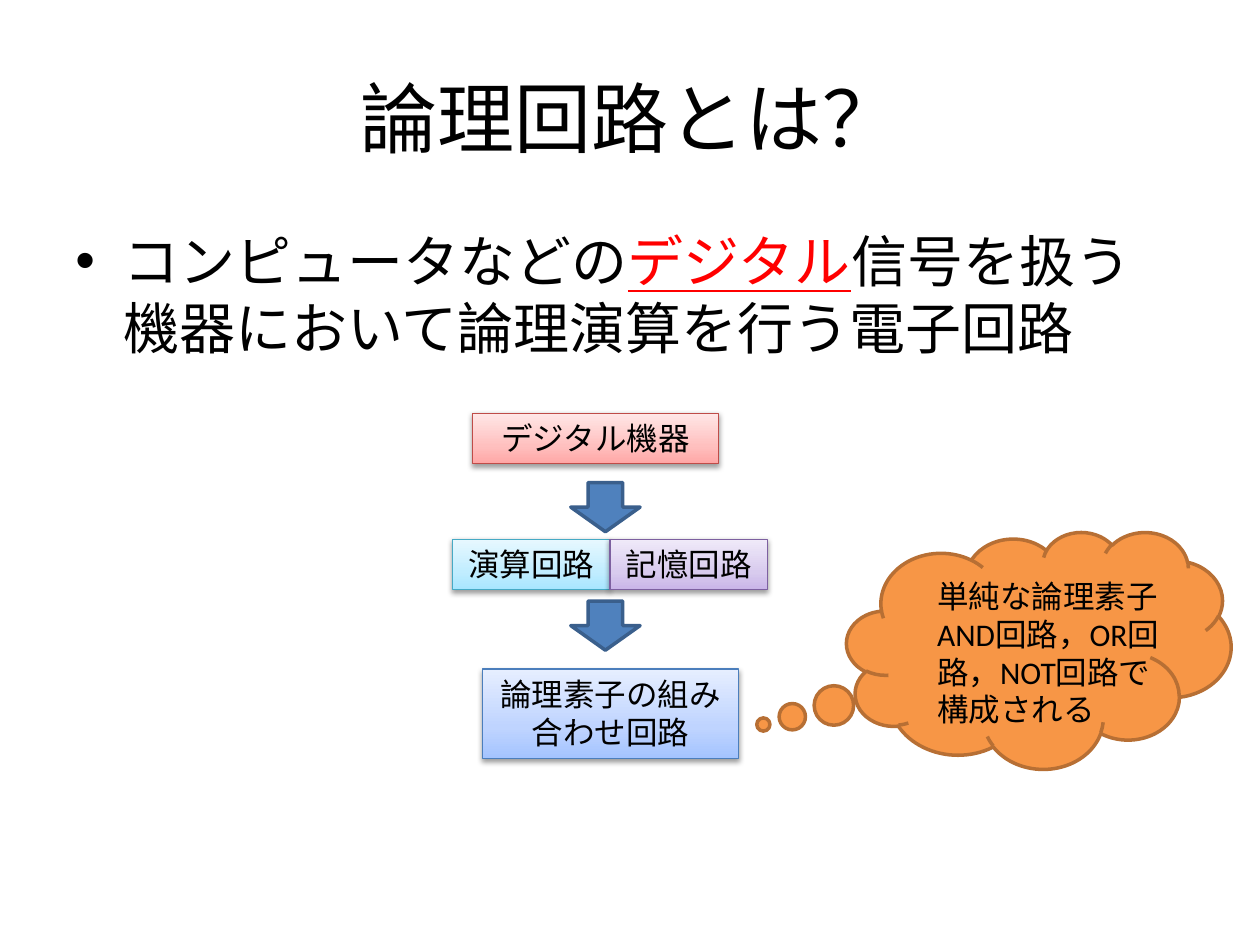
from copy import deepcopy
from dataclasses import dataclass

from lxml import etree
from pptx import Presentation
from pptx.dml.color import RGBColor
from pptx.enum.shapes import MSO_SHAPE
from pptx.enum.text import MSO_ANCHOR, MSO_AUTO_SIZE, PP_ALIGN
from pptx.oxml.ns import qn
from pptx.util import Inches, Pt

RECT, ARROW, CLOUD = MSO_SHAPE.RECTANGLE, MSO_SHAPE.DOWN_ARROW, MSO_SHAPE.CLOUD_CALLOUT
TOP, MIDDLE = MSO_ANCHOR.TOP, MSO_ANCHOR.MIDDLE
LEFT, CENTER = PP_ALIGN.LEFT, PP_ALIGN.CENTER
GROW, FIXED = MSO_AUTO_SIZE.SHAPE_TO_FIT_TEXT, MSO_AUTO_SIZE.NONE


@dataclass(frozen=True)
class Theme:
    font: str = "Calibri"
    title: int = 44
    body: int = 32
    label: int = 18
    ink: str = "000000"
    accent: str = "FF0000"
    cloud: tuple = ("F79646", "B76F34")
    arrow: tuple = ("4F81BD", "3A5F8C")
    red: tuple = ("FFA6A5", "FFC0BF", "FFE7E7", "BF4C48")
    cyan: tuple = ("A7E6FF", "C1EDFF", "E7F8FF", "46AAC5")
    violet: tuple = ("C9B5E8", "D8CBEE", "F0EAF9", "7D60A0")
    blue: tuple = ("A4C4FF", "BFD4FF", "E6EEFF", "4B7EBC")


theme = Theme()


def write(shape, paras, size, align=LEFT, anchor=TOP, fit=GROW):
    """Fill a shape with paragraphs, each a list of (text, colour, underline)."""
    frame = shape.text_frame
    look = {"word_wrap": True, "auto_size": fit, "vertical_anchor": anchor}
    for name, value in look.items():
        setattr(frame, name, value)
    for i, runs in enumerate(paras):
        para = frame.paragraphs[0] if i == 0 else frame.add_paragraph()
        para.alignment = align
        for text, color, under in runs:
            run = para.add_run()
            run.text = text
            style = {"name": theme.font, "size": Pt(size), "underline": under}
            for name, value in style.items():
                setattr(run.font, name, value)
            run.font.color.rgb = RGBColor.from_string(color)


def draw(kind, box, line, width):
    shape = slide.shapes.add_shape(kind, *map(Inches, box))
    shape.shadow.inherit = False
    shape.line.color.rgb = RGBColor.from_string(line)
    shape.line.width = Pt(width)
    return shape


deck = Presentation()
deck.slide_width, deck.slide_height = Inches(10), Inches(7.5)
slide = deck.slides.add_slide(deck.slide_layouts[6])

# Thought cloud, behind everything else
fill, line = theme.cloud
cloud = draw(CLOUD, (6.72, 4.22, 3.05, 1.88), line, 2)
cloud.fill.solid()
cloud.fill.fore_color.rgb = RGBColor.from_string(fill)
cloud.adjustments[0], cloud.adjustments[1] = -0.717, 0.314

# Title and bullet
title = slide.shapes.add_textbox(*map(Inches, (0.5, 0.3, 9, 1.25)))
write(title, [[("論理回路とは？", theme.ink, False)]], theme.title, CENTER, MIDDLE, FIXED)

body = slide.shapes.add_textbox(*map(Inches, (0.5, 1.75, 9, 4.95)))
words = [
    ("コンピュータなどの", theme.ink, False),
    ("デジタル", theme.accent, True),
    ("信号を扱う機器において論理演算を行う電子回路", theme.ink, False),
]
write(body, [words], theme.body, fit=FIXED)
para = body.text_frame.paragraphs[0]
para.space_before = Pt(theme.body * 0.2)
props = para._p.get_or_add_pPr()
props.set("marL", str(Inches(0.38)))
props.set("indent", str(-Inches(0.38)))
etree.SubElement(props, qn("a:buFont"), typeface="Arial")
etree.SubElement(props, qn("a:buChar"), char="•")

# Circuit boxes: gradient from bottom to top, soft shadow below
boxes = [
    ("デジタル機器", (3.75, 3.28, 1.95, 0.4), theme.red),
    ("演算回路", (3.59, 4.28, 1.25, 0.4), theme.cyan),
    ("記憶回路", (4.84, 4.28, 1.25, 0.4), theme.violet),
    ("論理素子の組み合わせ回路", (3.83, 5.31, 2.03, 0.71), theme.blue),
]
for text, box, (*tones, line) in boxes:
    shape = draw(RECT, box, line, 0.75)
    shape.fill.gradient()
    shape.fill.gradient_angle = 90
    props = shape.element.spPr
    first = props.find(".//" + qn("a:gs"))
    first.addnext(deepcopy(first))
    for stop, spot, tone in zip(shape.fill.gradient_stops, (0, 0.35, 1), tones):
        stop.position = spot
        stop.color.rgb = RGBColor.from_string(tone)
    shade = etree.SubElement(
        props.find(qn("a:effectLst")), qn("a:outerShdw"), blurRad=str(Pt(3.1)),
        dist=str(Pt(1.6)), dir="5400000", rotWithShape="0")
    black = etree.SubElement(shade, qn("a:srgbClr"), val=theme.ink)
    etree.SubElement(black, qn("a:alpha"), val="38000")
    write(shape, [[(text, theme.ink, False)]], theme.label, CENTER)

# Words on the cloud
note = slide.shapes.add_textbox(*map(Inches, (7.34, 4.53, 2.03, 1.31)))
lines = ["単純な論理素子", "AND回路，OR回路，NOT回路で構成される"]
write(note, [[(text, theme.ink, False)] for text in lines], theme.label)

# Arrows between the rows
fill, line = theme.arrow
for top in (3.83, 4.77):
    arrow = draw(ARROW, (4.53, top, 0.55, 0.39), line, 2)
    arrow.fill.solid()
    arrow.fill.fore_color.rgb = RGBColor.from_string(fill)

deck.save("out.pptx")
